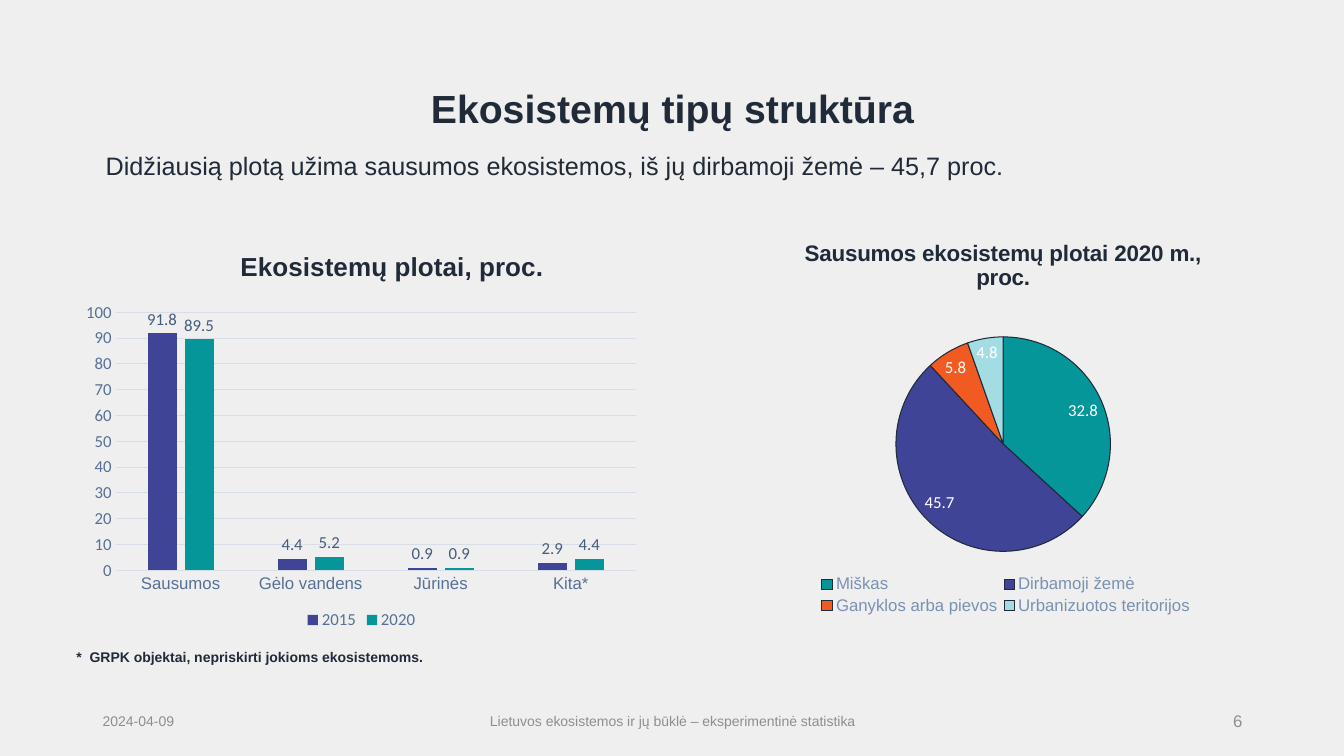
from lxml import etree
from pptx import Presentation
from pptx.chart.data import CategoryChartData
from pptx.dml.color import RGBColor
from pptx.enum.chart import XL_CHART_TYPE, XL_LABEL_POSITION, XL_LEGEND_POSITION, XL_TICK_MARK
from pptx.enum.text import MSO_ANCHOR, PP_ALIGN
from pptx.oxml.ns import qn
from pptx.util import Inches, Pt

LEFT, CENTER, RIGHT = PP_ALIGN.LEFT, PP_ALIGN.CENTER, PP_ALIGN.RIGHT
TOP, MIDDLE, BOTTOM = MSO_ANCHOR.TOP, MSO_ANCHOR.MIDDLE, MSO_ANCHOR.BOTTOM
COLUMNS, PIE = XL_CHART_TYPE.COLUMN_CLUSTERED, XL_CHART_TYPE.PIE
OUTSIDE_END, BEST_FIT = XL_LABEL_POSITION.OUTSIDE_END, XL_LABEL_POSITION.BEST_FIT
LEGEND_BOTTOM, NO_TICK = XL_LEGEND_POSITION.BOTTOM, XL_TICK_MARK.NONE

INK, GREY, SLATE, GRID = "202A38", "8D8E91", "567096", "D7DEE8"
INDIGO, TEAL, ORANGE, AQUA = "3F4496", "049699", "F15B22", "A4DCE3"


def style(font, size, color, name="Arial", bold=False):
    font.size, font.name, font.bold = Pt(size), name, bold
    font.color.rgb = RGBColor.from_string(color)


def place(chart, part, index, **fractions):
    """Give a chart part a manual layout in fractions of the chart."""
    parent = chart.element.xpath("c:chart/c:" + part)[0]
    for old in parent.findall(qn("c:layout")):
        parent.remove(old)
    layout = etree.Element(qn("c:layout"))
    manual = etree.SubElement(layout, qn("c:manualLayout"))
    settings = {"xMode": "edge", "yMode": "edge", **fractions}
    if part == "plotArea":
        settings = {"layoutTarget": "inner", **settings}
    for key, value in settings.items():
        etree.SubElement(manual, qn("c:" + key)).set("val", str(value))
    parent.insert(index, layout)


deck = Presentation()
deck.slide_width, deck.slide_height = Inches(13.33), Inches(7.5)
page = deck.slides.add_slide(deck.slide_layouts[6])
page.background.fill.solid()
page.background.fill.fore_color.rgb = RGBColor.from_string("EFEFEF")

# Title, lead sentence, footnote and footer
texts = [
    ("Ekosistemų tipų struktūra", (0.92, 0.78, 11.5, 0.58), 28, INK, True, CENTER, MIDDLE),
    ("Didžiausią plotą užima sausumos ekosistemos, iš jų dirbamoji žemė – 45,7 proc.",
     (0.95, 1.44, 11.43, 0.4), 18, INK, False, LEFT, TOP),
    ("*  GRPK objektai, nepriskirti jokioms ekosistemoms.",
     (0.66, 6.17, 5.67, 0.48), 10, INK, True, LEFT, BOTTOM),
    ("2024-04-09", (0.92, 6.95, 3, 0.4), 10, GREY, False, LEFT, MIDDLE),
    ("Lietuvos ekosistemos ir jų būklė – eksperimentinė statistika",
     (4.42, 6.95, 4.5, 0.4), 10, GREY, False, CENTER, MIDDLE),
    ("6", (9.42, 6.95, 3, 0.4), 12, GREY, False, RIGHT, MIDDLE),
]
for text, place_at, size, color, bold, align, anchor in texts:
    box = page.shapes.add_textbox(*map(Inches, place_at))
    frame = box.text_frame
    frame.word_wrap, frame.vertical_anchor = True, anchor
    frame.text = text
    para = frame.paragraphs[0]
    para.alignment = align
    style(para.runs[0].font, size, color, bold=bold)

# Chart data
area_data = CategoryChartData(number_format="#,##0.0")
area_data.categories = ["Sausumos", "Gėlo vandens", "Jūrinės", "Kita*"]
area_data.add_series("2015", (91.8, 4.4, 0.9, 2.9))
area_data.add_series("2020", (89.5, 5.2, 0.9, 4.4))

land_data = CategoryChartData(number_format="#,##0.0")
land_data.categories = ["Miškas", "Dirbamoji žemė", "Ganyklos arba pievos",
                        "Urbanizuotos teritorijos"]
land_data.add_series("Series 1", (32.8, 45.7, 5.8, 4.8))

# Both charts: title, legend and data labels
charts = []
for kind, place_at, data, title, title_size, legend_font, label_color, position in [
    (COLUMNS, (0.75, 2.35, 5.67, 3.94), area_data, "Ekosistemų plotai, proc.", 18.6,
     (12, SLATE, "Calibri"), "465C7B", OUTSIDE_END),
    (PIE, (7.13, 2.2, 5.64, 3.94), land_data, "Sausumos ekosistemų plotai 2020 m., proc.", 16,
     (12, "7991B2", "Arial"), "FFFFFF", BEST_FIT),
]:
    chart = page.shapes.add_chart(kind, *map(Inches, place_at), data).chart
    style(chart.font, 10, INK, "Calibri")
    chart.has_title = True
    chart.chart_title.text_frame.text = title
    style(chart.chart_title.text_frame.paragraphs[0].runs[0].font, title_size, INK, bold=True)
    chart.has_legend = True
    chart.legend.position = LEGEND_BOTTOM
    chart.legend.include_in_layout = False
    style(chart.legend.font, *legend_font)
    plot = chart.plots[0]
    plot.vary_by_categories = kind == PIE
    for series in plot.series:
        labels = series.data_labels
        labels.show_value, labels.position = True, position
        labels.number_format, labels.number_format_is_linked = "#,##0.0", False
        style(labels.font, 12, label_color, "Calibri")
    charts.append(chart)
area_chart, land_chart = charts

# Column chart: bars, axes and layout
columns = area_chart.plots[0]
columns.gap_width, columns.overlap = 219, -27
for series, color in zip(columns.series, (INDIGO, TEAL)):
    series.format.fill.solid()
    series.format.fill.fore_color.rgb = RGBColor.from_string(color)
category_axis, value_axis = area_chart.category_axis, area_chart.value_axis
for axis, font_name in ((category_axis, "Arial"), (value_axis, "Calibri")):
    axis.major_tick_mark = axis.minor_tick_mark = NO_TICK
    style(axis.tick_labels.font, 12, SLATE, font_name)
value_axis.minimum_scale, value_axis.maximum_scale, value_axis.major_unit = 0, 100, 10
value_axis.tick_labels.number_format = "0"
value_axis.tick_labels.number_format_is_linked = False
value_axis.format.line.fill.background()
for line in (category_axis.format.line, value_axis.major_gridlines.format.line):
    line.color.rgb = RGBColor.from_string(GRID)
    line.width = Pt(0.75)
place(area_chart, "title", 1, x=0.28, y=0.02)
place(area_chart, "plotArea", 0, x=0.07, y=0.19, w=0.91, h=0.65)

# Pie chart: slices and layout
for index, color in enumerate((TEAL, INDIGO, ORANGE, AQUA)):
    slice_format = land_chart.plots[0].series[0].points[index].format
    slice_format.fill.solid()
    slice_format.fill.fore_color.rgb = RGBColor.from_string(color)
    slice_format.line.color.rgb = RGBColor.from_string(INK)
    slice_format.line.width = Pt(0.75)
place(land_chart, "plotArea", 0, x=0.31, y=0.29, w=0.38, h=0.54)
place(land_chart, "legend", 1, x=0.17, y=0.88, w=0.67, h=0.12)

deck.save("out.pptx")
